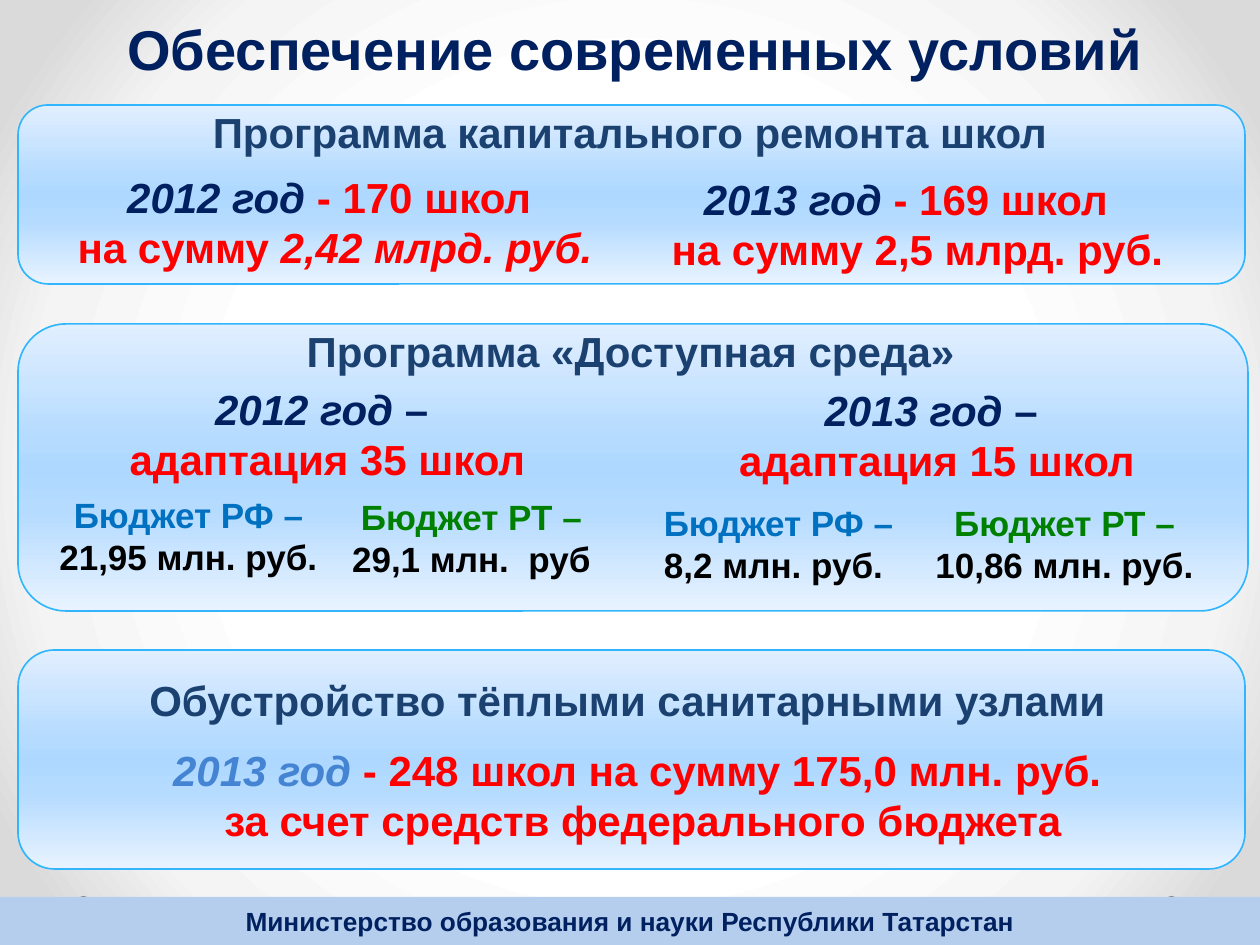
from dataclasses import dataclass

import pptx
import pptx.dml.color
import pptx.enum.shapes
import pptx.enum.text
import pptx.oxml
import pptx.oxml.ns
import pptx.util

RGB = pptx.dml.color.RGBColor
SHAPE = pptx.enum.shapes.MSO_SHAPE
ANCHOR = pptx.enum.text.MSO_ANCHOR
qn = pptx.oxml.ns.qn

NAVY = RGB(0x00, 0x20, 0x60)
HEADING = RGB(0x1B, 0x41, 0x71)
RED = RGB(0xFF, 0x00, 0x00)
BLUE = RGB(0x00, 0x70, 0xC0)
SOFT_BLUE = RGB(0x45, 0x84, 0xD3)
GREEN = RGB(0x00, 0x80, 0x00)
BLACK = RGB(0x00, 0x00, 0x00)
GREY = RGB(0x80, 0x80, 0x80)
FOOTER = RGB(0xB5, 0xCE, 0xED)
CARD_LINE = RGB(0x31, 0xB6, 0xFD)
CARD_STOPS = [(0, "E1EFFF"), (40, "B5DBFF"), (50, "AED8FF"), (65, "B5DBFF"), (100, "E8F3FF")]
PAGE_STOPS = [(50, "FFFFFF"), (76, "F4F4F4"), (92, "DADADA")]
LINEAR = '<a:lin ang="5400000" scaled="0"/>'
RADIAL = '<a:path path="circle"><a:fillToRect l="50000" t="50000" r="50000" b="50000"/></a:path>'


def px(n: int) -> pptx.util.Emu:
    return pptx.util.Emu(round(n * 914400 / 126))


@dataclass
class Run:
    text: str
    color: RGB
    italic: bool = False


@dataclass
class Label:
    box: tuple[int, int, int, int]
    paragraphs: list[list[Run]]
    size: int = 24
    anchor: ANCHOR = ANCHOR.MIDDLE


def set_gradient(fill, owner, stops: list[tuple[int, str]], direction: str) -> None:
    """Give a fill several colour stops and a direction."""
    fill.gradient()
    grad = owner.find(".//" + qn("a:gradFill"))
    for child in list(grad):
        grad.remove(child)
    stop_xml = "".join(
        f'<a:gs pos="{pos * 1000}"><a:srgbClr val="{color}"/></a:gs>' for pos, color in stops
    )
    ns = pptx.oxml.ns.nsdecls("a")
    source = f"<a:gradFill {ns}><a:gsLst>{stop_xml}</a:gsLst>{direction}</a:gradFill>"
    for child in list(pptx.oxml.parse_xml(source)):
        grad.append(child)


def add_shape(s, kind: SHAPE, box: tuple[int, int, int, int], color: RGB | None = None):
    sp = s.shapes.add_shape(kind, *map(px, box))
    sp.shadow.inherit = False
    sp.line.fill.background()
    if color is None:
        sp.fill.background()
    else:
        sp.fill.solid()
        sp.fill.fore_color.rgb = color
    return sp


def add_card(s, box: tuple[int, int, int, int]) -> None:
    sp = add_shape(s, SHAPE.ROUNDED_RECTANGLE, box)
    set_gradient(sp.fill, sp._element.spPr, CARD_STOPS, LINEAR)
    sp.line.color.rgb = CARD_LINE
    sp.line.width = pptx.util.Pt(0.94)


def write(sp, label: Label) -> None:
    tf = sp.text_frame
    for name, value in {"word_wrap": True, "vertical_anchor": label.anchor}.items():
        setattr(tf, name, value)
    for i, runs in enumerate(label.paragraphs):
        p = tf.add_paragraph() if i else tf.paragraphs[0]
        p.alignment = pptx.enum.text.PP_ALIGN.CENTER
        for run in runs:
            for j, line in enumerate(run.text.split("\n")):
                if j:
                    p.add_line_break()
                r = p.add_run()
                r.text = line
                style = {"name": "Arial", "size": pptx.util.Pt(label.size),
                         "bold": True, "italic": run.italic}
                for name, value in style.items():
                    setattr(r.font, name, value)
                r.font.color.rgb = run.color


def add_label(s, label: Label) -> None:
    write(s.shapes.add_textbox(*map(px, label.box)), label)


def add_budget(s, box: tuple[int, int, int, int], source: str, color: RGB, amount: str) -> None:
    label = Label(box, [[Run(f"Бюджет {source} – ", color), Run(amount, BLACK)]], 20)
    write(add_shape(s, SHAPE.ROUNDED_RECTANGLE, box), label)


CARDS = [(18, 650, 1227, 219), (18, 324, 1230, 287), (18, 105, 1227, 179)]

LABELS = [
    # Title and card headings
    Label((60, 21, 1150, 54), [[Run("Обеспечение современных условий", NAVY)]], 32),
    Label((164, 100, 932, 63), [[Run("Программа капитального ремонта школ", HEADING)]]),
    Label((268, 319, 725, 63), [[Run("Программа «Доступная среда»", HEADING)]]),
    Label((135, 668, 985, 63), [[Run("Обустройство тёплыми санитарными узлами", HEADING)]]),
    # School repairs
    Label((53, 165, 564, 118), [
        [Run("2012 год ", NAVY, True), Run("- 170 школ ", RED)],
        [Run(" на сумму ", RED), Run("2,42 млрд. руб. ", RED, True)],
    ], anchor=ANCHOR.TOP),
    Label((620, 167, 595, 106), [
        [Run("2013 год ", NAVY, True), Run("- 169 школ  ", RED)],
        [Run("на сумму 2,5 млрд. руб.", RED)],
    ], anchor=ANCHOR.TOP),
    # Accessible environment
    Label((74, 377, 507, 115), [
        [Run("2012 год", NAVY, True), Run(" – ", NAVY)],
        [Run("адаптация 35 школ", RED)],
    ], anchor=ANCHOR.TOP),
    Label((669, 378, 536, 106), [
        [Run("2013 год", NAVY, True), Run(" – ", NAVY)],
        [Run("адаптация 15 школ", RED)],
    ], anchor=ANCHOR.TOP),
    # Sanitary units
    Label((74, 750, 1138, 89), [[
        Run("2013 год ", SOFT_BLUE, True),
        Run("- 248 школ на сумму 175,0 млн. руб. \nза счет средств федерального бюджета", RED),
    ]]),
]

BUDGETS = [
    ((40, 491, 297, 89), "РФ", BLUE, "21,95 млн. руб. "),
    ((333, 493, 277, 89), "РТ", GREEN, "29,1 млн.  руб"),
    ((640, 499, 277, 89), "РФ", BLUE, "8,2 млн. руб. "),
    ((917, 499, 295, 89), "РТ", GREEN, "10,86 млн. руб. "),
]


def main() -> None:
    prs = pptx.Presentation()
    prs.slide_width, prs.slide_height = px(1260), px(945)
    s = prs.slides.add_slide(prs.slide_layouts[6])
    set_gradient(s.background.fill, s._element, PAGE_STOPS, RADIAL)

    # Footer band with its two dots
    for left in (1166, 78):
        add_shape(s, SHAPE.OVAL, (left, 896, 11, 11), GREY)
    footer = Label((0, 897, 1260, 48),
                   [[Run("Министерство образования и науки Республики Татарстан", NAVY)]], 15)
    write(add_shape(s, SHAPE.RECTANGLE, footer.box, FOOTER), footer)

    # Cards and their contents
    for box in CARDS:
        add_card(s, box)
    for label in LABELS:
        add_label(s, label)
    for budget in BUDGETS:
        add_budget(s, *budget)

    prs.save("out.pptx")


if __name__ == "__main__":
    main()
